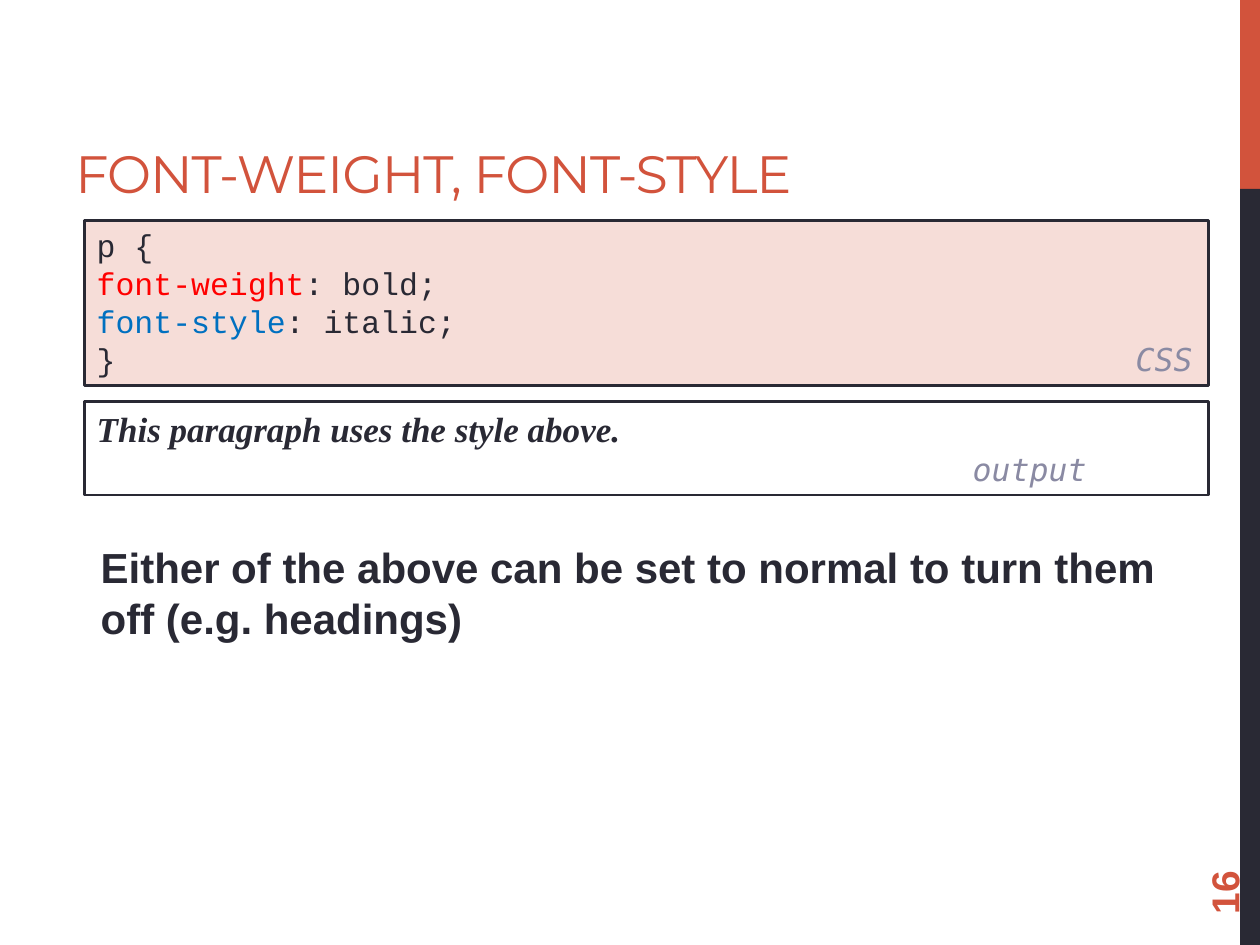
from lxml import etree
from pptx import Presentation
from pptx.dml.color import RGBColor
from pptx.enum.shapes import MSO_SHAPE
from pptx.enum.text import MSO_ANCHOR, PP_ALIGN
from pptx.oxml.ns import qn
from pptx.util import Cm, Pt

RECTANGLE = MSO_SHAPE.RECTANGLE
TOP, MIDDLE, BOTTOM = MSO_ANCHOR.TOP, MSO_ANCHOR.MIDDLE, MSO_ANCHOR.BOTTOM
LEFT = PP_ALIGN.LEFT

COLORS = {
    "accent": "D2533C", "dark": "292934", "code": "F6DDD8", "white": "FFFFFF",
    "label": "8A8AA3", "red": "FF0000", "blue": "0070C0",
}


def add_rectangle(left, top, width, height, fill, outlined=False):
    shape = slide.shapes.add_shape(RECTANGLE, Cm(left), Cm(top), Cm(width), Cm(height))
    shape.shadow.inherit = False
    shape.fill.solid()
    shape.fill.fore_color.rgb = RGBColor.from_string(COLORS[fill])
    if outlined:
        shape.line.color.rgb = RGBColor.from_string(COLORS["dark"])
        shape.line.width = Pt(1.5)
    else:
        shape.line.fill.background()
    shape.text_frame.word_wrap = True
    shape.text_frame.vertical_anchor = TOP
    return shape


def style_font(font, name, size, color, bold=False, italic=False):
    font.name = name
    font.size = Pt(size)
    font.color.rgb = RGBColor.from_string(COLORS[color])
    font.bold = bold
    font.italic = italic


presentation = Presentation()
presentation.slide_width, presentation.slide_height = Cm(25.4), Cm(19.05)
slide = presentation.slides.add_slide(presentation.slide_layouts[6])

# Side bar
add_rectangle(25, 0, 0.4, 3.81, "accent")
add_rectangle(25, 3.81, 0.4, 15.24, "dark")

# Title, body text and turned slide number
texts = [
    ("FONT-WEIGHT, FONT-STYLE", (1.27, 0, 21.16, 4.24), BOTTOM, 0,
     ("Montserrat", 30, "accent")),
    ("Either of the above can be set to normal to turn them off (e.g. headings)",
     (1.78, 10.8, 22.66, 4.24), TOP, 0, ("Arial", 24, "dark", True)),
    ("16", (22.84, 16.34, 3.66, 1.02), MIDDLE, 270, ("Arial", 22.2, "accent", True)),
]
for text, box, anchor, rotation, font_style in texts:
    shape = slide.shapes.add_textbox(*(Cm(length) for length in box))
    shape.rotation = rotation
    shape.text_frame.word_wrap = True
    shape.text_frame.vertical_anchor = anchor
    paragraph = shape.text_frame.paragraphs[0]
    run = paragraph.add_run()
    run.text = text
    style_font(paragraph.font, *font_style)
    if font_style[0] == "Montserrat":
        run.font._element.set("spc", "-60")

# Code box: the language label sits at a right tab on the last line
code_lines = [
    [("p {", "dark")],
    [("font-weight", "red"), (": bold;", "dark")],
    [("font-style", "blue"), (": italic;", "dark")],
    [("}\t", "dark"), ("CSS", "label")],
]
frame = add_rectangle(1.7, 4.44, 22.66, 3.33, "code", outlined=True).text_frame
for index, line in enumerate(code_lines):
    paragraph = frame.add_paragraph() if index else frame.paragraphs[0]
    paragraph.alignment = LEFT
    for text, color in line:
        run = paragraph.add_run()
        run.text = text
        is_label = color == "label"
        style_font(run.font, "DejaVu Sans Mono" if is_label else "Courier New",
                   18, color, italic=is_label)
tab_list = etree.SubElement(paragraph._p.get_or_add_pPr(), qn("a:tabLst"))
etree.SubElement(tab_list, qn("a:tab"), pos=str(Cm(22.09)), algn="r")

# Output box: the label is indented below the sample
output_lines = [
    ("This paragraph uses the style above.", 0, ("Times New Roman", 20, "dark", True, True)),
    ("output", 17.66, ("DejaVu Sans Mono", 18, "label", False, True)),
]
frame = add_rectangle(1.7, 8.1, 22.66, 1.88, "white", outlined=True).text_frame
for index, (text, indent, font_style) in enumerate(output_lines):
    paragraph = frame.add_paragraph() if index else frame.paragraphs[0]
    paragraph.text = text
    paragraph.alignment = LEFT
    paragraph._p.get_or_add_pPr().set("marL", str(Cm(indent)))
    style_font(paragraph.font, *font_style)

presentation.save("out.pptx")
